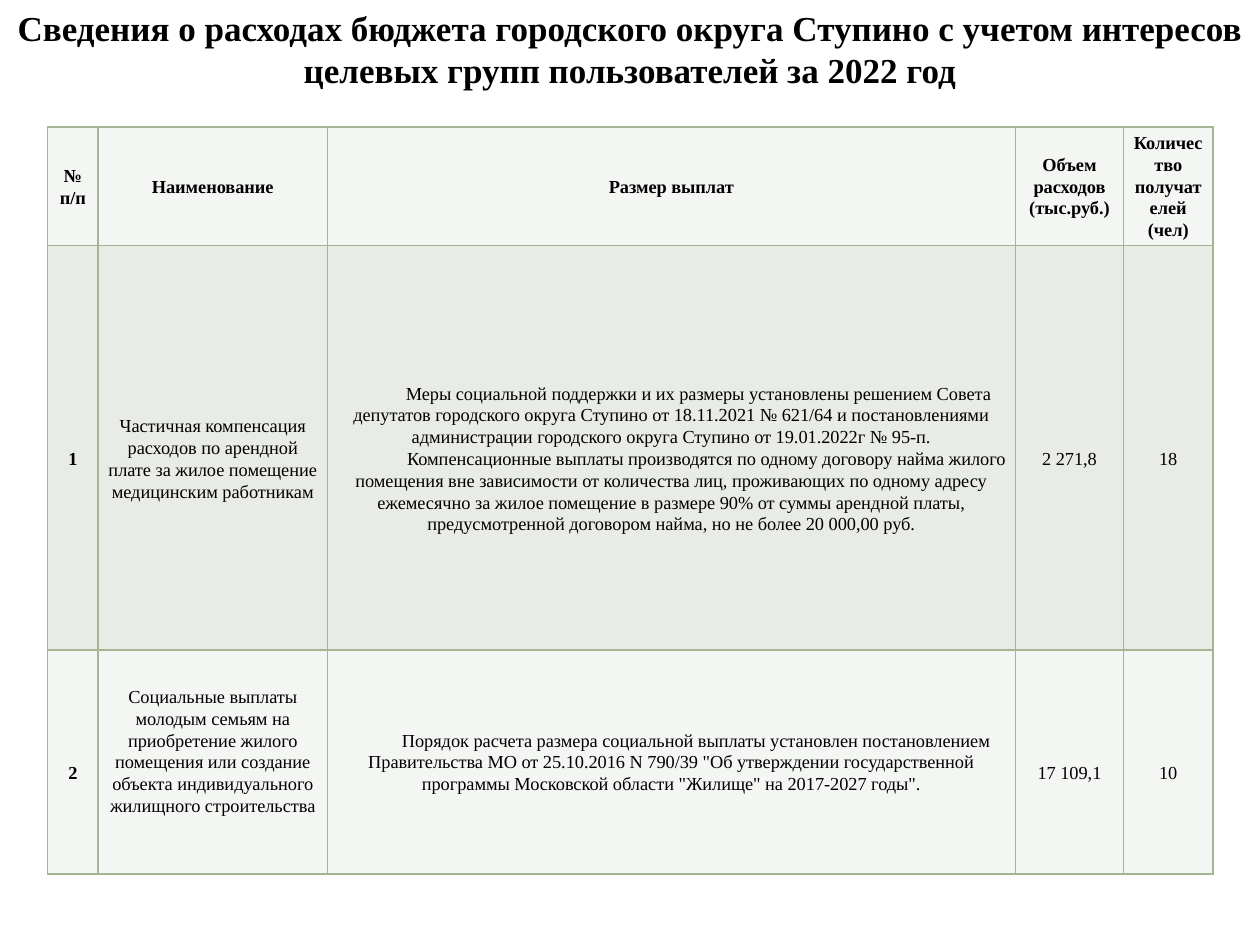
"""Build the slide on budget spending by target user groups."""
from dataclasses import dataclass

from lxml.etree import fromstring
from pptx import Presentation
from pptx.dml.color import RGBColor
from pptx.enum.text import MSO_ANCHOR, MSO_AUTO_SIZE, PP_ALIGN
from pptx.oxml.ns import nsdecls, qn
from pptx.util import Cm, Pt


@dataclass(frozen=True)
class Theme:
    font: str = "Times New Roman"
    text: str = "000000"
    border: str = "A5B592"
    light: str = "F0F3EE"
    dark: str = "E1E5DC"
    fill_alpha: int = 70000
    title_size: float = 20
    table_size: float = 10.5
    border_width: float = 1


theme = Theme()


def format_paragraph(p, size, bold):
    p.alignment = PP_ALIGN.CENTER
    for r in p.runs:
        r.font.name = theme.font
        r.font.size = Pt(size)
        r.font.bold = bold
        r.font.color.rgb = RGBColor.from_string(theme.text)


def paint_cell(cell, color):
    cell.fill.solid()
    cell.fill.fore_color.rgb = RGBColor.from_string(color)
    tc_pr = cell._tc.get_or_add_tcPr()
    clr = tc_pr.find(".//" + qn("a:srgbClr"))
    clr.append(fromstring(f'<a:alpha {nsdecls("a")} val="{theme.fill_alpha}"/>'))
    for i, side in enumerate("LRTB"):
        tc_pr.insert(i, fromstring(
            f'<a:ln{side} {nsdecls("a")} w="{Pt(theme.border_width)}"><a:solidFill>'
            f'<a:srgbClr val="{theme.border}"/></a:solidFill></a:ln{side}>'))


prs = Presentation()
prs.slide_width, prs.slide_height = Cm(25.4), Cm(19.05)
s = prs.slides.add_slide(prs.slide_layouts[5])

title = s.shapes.title
title.left, title.top, title.width, title.height = Cm(0), Cm(0), Cm(25.4), Cm(1.96)
tf = title.text_frame
tf.text = ("Сведения о расходах бюджета городского округа Ступино с учетом интересов "
           "целевых групп пользователей за 2022 год")
tf.word_wrap = True
tf.auto_size = MSO_AUTO_SIZE.NONE
tf.vertical_anchor = MSO_ANCHOR.TOP
format_paragraph(tf.paragraphs[0], theme.title_size, True)

rows = [
    ["№ п/п", "Наименование", "Размер выплат", "Объем расходов\n(тыс.руб.)",
     "Количество получателей\n(чел)"],
    ["1",
     "Частичная компенсация расходов по арендной плате за жилое помещение "
     "медицинским работникам",
     "Меры социальной поддержки и их размеры установлены решением Совета депутатов "
     "городского округа Ступино от 18.11.2021 № 621/64 и постановлениями администрации "
     "городского округа Ступино от 19.01.2022г № 95-п.\n"
     "Компенсационные выплаты производятся по одному договору найма жилого помещения "
     "вне зависимости от количества лиц, проживающих по одному адресу ежемесячно "
     "за жилое помещение в размере 90% от суммы арендной платы, предусмотренной "
     "договором найма, но не более 20 000,00 руб.",
     "2 271,8", "18"],
    ["2",
     "Социальные выплаты молодым семьям на приобретение жилого помещения или создание "
     "объекта индивидуального жилищного строительства",
     "Порядок расчета размера социальной выплаты установлен постановлением "
     "Правительства МО от 25.10.2016 N 790/39 \"Об утверждении государственной "
     "программы Московской области \"Жилище\" на 2017-2027 годы\".",
     "17 109,1", "10"],
]
col_widths = [1.02, 4.62, 13.87, 2.18, 1.8]
row_heights = [2.39, 8.15, 4.52]
row_fills = [theme.light, theme.dark, theme.light]
line_gap = Cm(0.44)
bottom_gaps = {(2, 1): line_gap, (2, 2): line_gap}
top_gaps = {(r, c): line_gap for r in (1, 2) for c in range(5) if (r, c) != (2, 1)}
first_line_indents = {(1, 2): [1.1, 1.42], (2, 2): [1.0]}

table = s.shapes.add_table(len(rows), len(col_widths), Cm(0.96), Cm(2.56),
                           Cm(sum(col_widths)), Cm(sum(row_heights))).table
table.first_row = table.horz_banding = False
for col, width in zip(table.columns, col_widths):
    col.width = Cm(width)
for row, height in zip(table.rows, row_heights):
    row.height = Cm(height)

for i, row in enumerate(rows):
    for j, text in enumerate(row):
        cell = table.cell(i, j)
        cell.text_frame.text = text
        cell.vertical_anchor = MSO_ANCHOR.MIDDLE
        cell.margin_left = cell.margin_right = Cm(0.15)
        cell.margin_top = top_gaps.get((i, j), 0)
        cell.margin_bottom = bottom_gaps.get((i, j), 0)
        paint_cell(cell, row_fills[i])
        for p in cell.text_frame.paragraphs:
            p.line_spacing = 1.07
            format_paragraph(p, theme.table_size, i == 0 or j == 0)
        for p, indent in zip(cell.text_frame.paragraphs, first_line_indents.get((i, j), [])):
            p._p.get_or_add_pPr().set("indent", str(Cm(indent)))

prs.save("out.pptx")
